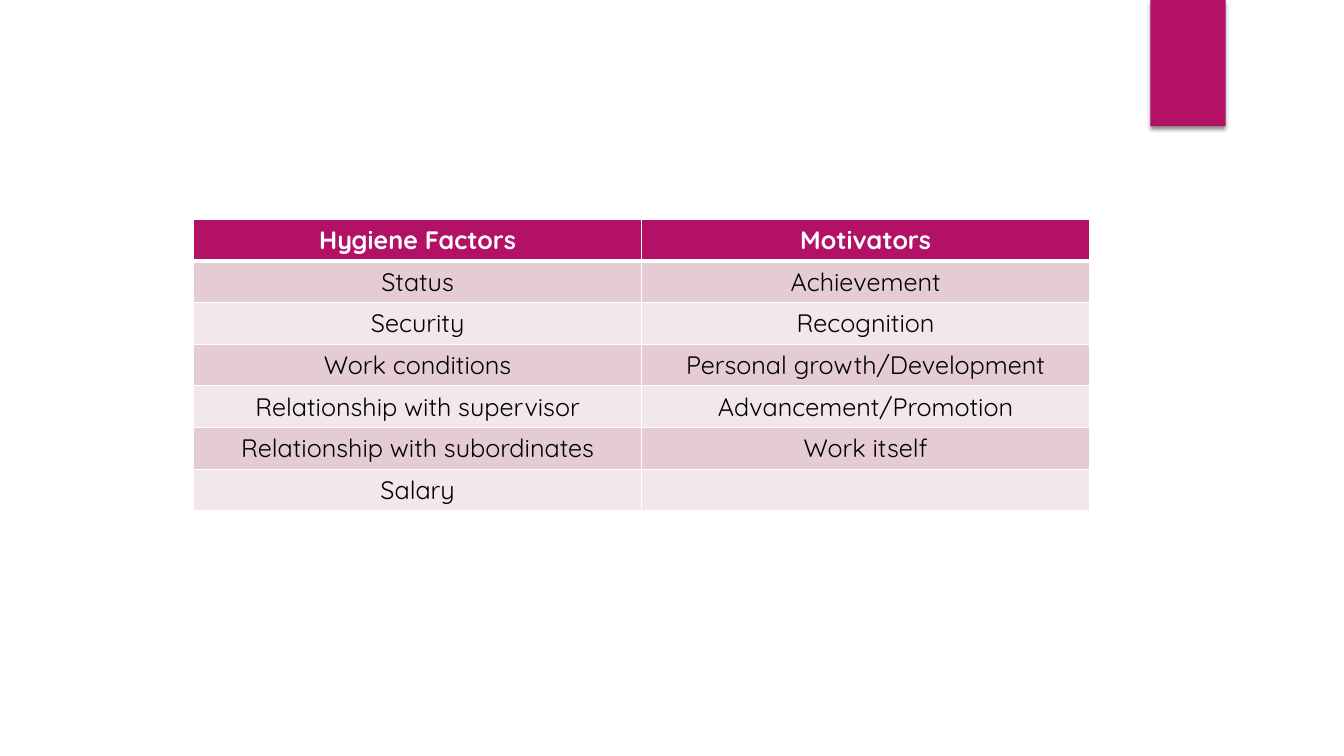
import dataclasses

import lxml.etree
import pptx
import pptx.dml.color
import pptx.enum.shapes
import pptx.enum.text
import pptx.oxml.ns
import pptx.util

Cm = pptx.util.Cm
Pt = pptx.util.Pt
RGB = pptx.dml.color.RGBColor.from_string
qn = pptx.oxml.ns.qn


@dataclasses.dataclass(frozen=True)
class Theme:
    accent: str = "B31166"
    bands: tuple = ("E5CCD3", "F2E7EA")
    text: str = "000000"
    light: str = "FFFFFF"
    font: str = "Quicksand"
    size: int = 18
    rule: int = 1
    header_rule: int = 3


class Deck:
    def __init__(self, theme):
        self.theme = theme
        self.prs = pptx.Presentation()
        self.prs.slide_width, self.prs.slide_height = Cm(33.87), Cm(19.05)
        self.slide = self.prs.slides.add_slide(self.prs.slide_layouts[6])

    def tab(self, left, top, width, height):
        s = self.slide.shapes.add_shape(
            pptx.enum.shapes.MSO_SHAPE.RECTANGLE, Cm(left), Cm(top), Cm(width), Cm(height))
        s.fill.solid()
        s.fill.fore_color.rgb = RGB(self.theme.accent)
        s.line.fill.background()
        s.shadow.inherit = False
        effects = s._element.spPr.find(qn("a:effectLst"))
        shadow = lxml.etree.SubElement(
            effects, qn("a:outerShdw"), blurRad=str(Pt(3)), dist=str(Pt(2)),
            dir="5400000", algn="ctr", rotWithShape="0")
        color = lxml.etree.SubElement(shadow, qn("a:srgbClr"), val=self.theme.text)
        lxml.etree.SubElement(color, qn("a:alpha"), val="45000")

    def borders(self, cell, widths):
        tc_pr = cell._tc.get_or_add_tcPr()
        for side, width in widths.items():
            line = lxml.etree.SubElement(tc_pr, qn("a:ln" + side), w=str(Pt(width)))
            fill = lxml.etree.SubElement(line, qn("a:solidFill"))
            lxml.etree.SubElement(fill, qn("a:srgbClr"), val=self.theme.light)

    def cell(self, cell, text, row):
        theme = self.theme
        header = row == 0
        widths = dict.fromkeys("LRTB", theme.rule)
        if row < 2:
            widths["B" if header else "T"] = theme.header_rule
        self.borders(cell, widths)
        cell.fill.solid()
        cell.fill.fore_color.rgb = RGB(theme.accent if header else theme.bands[(row - 1) % 2])
        p = cell.text_frame.paragraphs[0]
        p.alignment = pptx.enum.text.PP_ALIGN.CENTER
        if text:
            r = p.add_run()
            r.text = text
            style = {"name": theme.font, "size": Pt(theme.size), "bold": header}
            for name, value in style.items():
                setattr(r.font, name, value)
            r.font.color.rgb = RGB(theme.light if header else theme.text)

    def table(self, rows, left, top, width, row_height):
        table = self.slide.shapes.add_table(
            len(rows), len(rows[0]), Cm(left), Cm(top), Cm(width),
            Cm(row_height * len(rows))).table
        for i, texts in enumerate(rows):
            table.rows[i].height = Cm(row_height)
            for j, text in enumerate(texts):
                self.cell(table.cell(i, j), text, i)


FACTORS = [
    ("Hygiene Factors", "Motivators"),
    ("Status", "Achievement"),
    ("Security", "Recognition"),
    ("Work conditions", "Personal growth/Development"),
    ("Relationship with supervisor", "Advancement/Promotion"),
    ("Relationship with subordinates", "Work itself"),
    ("Salary", ""),
]


def main():
    deck = Deck(Theme())
    deck.tab(28.99, 0, 1.9, 3.18)
    deck.table(FACTORS, left=4.88, top=5.52, width=22.58, row_height=1.05)
    deck.prs.save("out.pptx")


if __name__ == "__main__":
    main()
